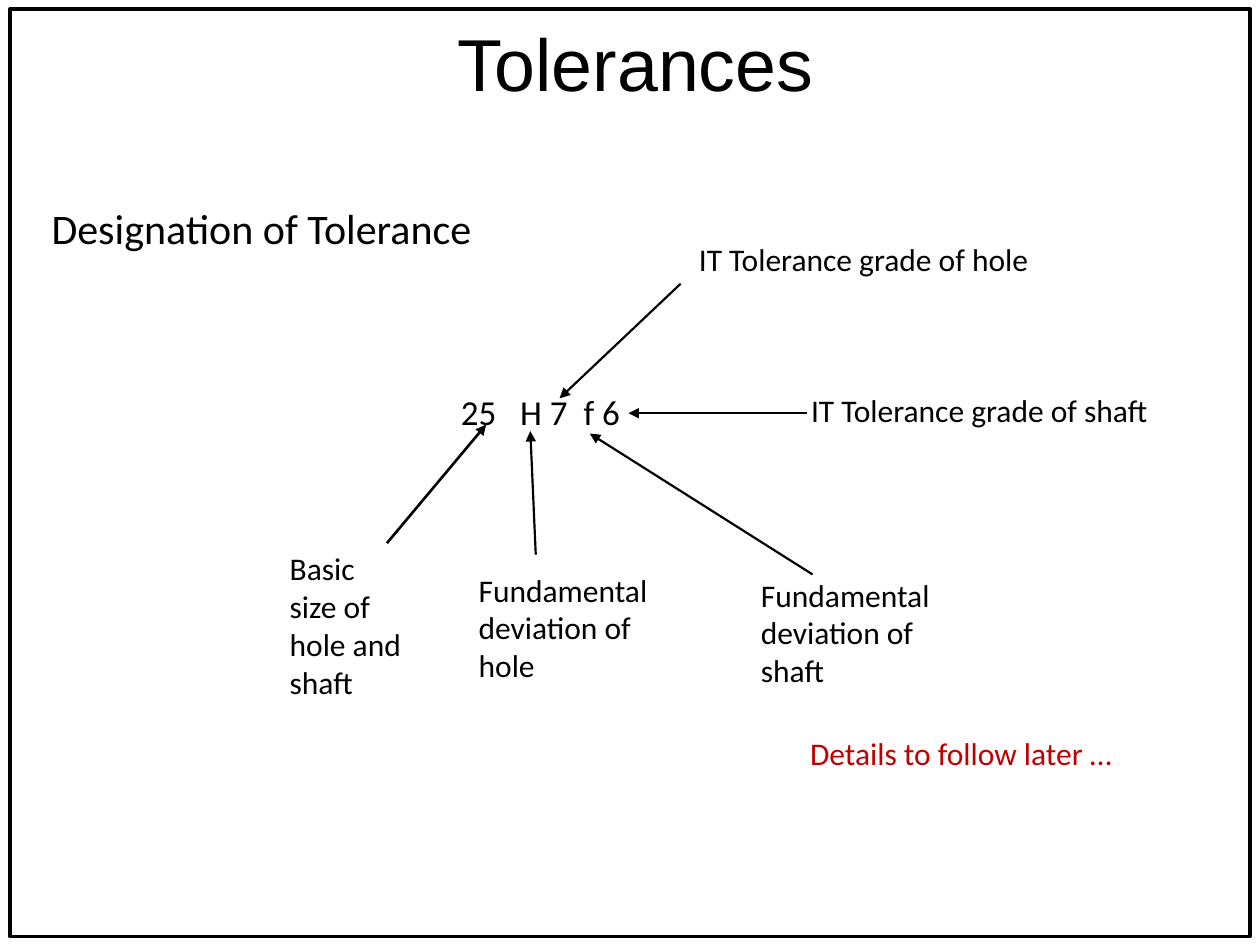
from lxml import etree
from pptx import Presentation
from pptx.dml.color import RGBColor
from pptx.enum import shapes, text
from pptx.oxml.ns import qn
from pptx.util import Cm, Pt

BLACK = RGBColor(0, 0, 0)
RED = RGBColor(0xC0, 0, 0)

# Lengths in centimetres
TITLE = ("Tolerances", (8.94, 0.23, 7.75, 2.06))
FRAME = (0.2, 0.18, 25, 18.7)
HEADING = ("Designation of Tolerance", (0.79, 3.96, 16.41, 1.27))

# Symbols of the designation, each with the extra gap in points after it
DESIGNATION = [("25", 9), ("H", 0), ("7", 4.5), ("f", 0), ("6", 0)]
DESIGNATION_BOX = (5.79, 7.75, 10.21, 1.12)

# Label, box, arrow start, arrow tip, arrow width
CALLOUTS = [
    ("Basic size of hole and shaft", (5.59, 10.95, 2.79, 3.33),
     (7.8, 10.95), (9.8, 8.56), 1.5),
    ("Fundamental deviation of hole", (9.4, 11.38, 4.19, 2.57),
     (10.8, 11.18), (10.69, 8.69), 1.25),
    ("IT Tolerance grade of hole", (13.84, 4.72, 8.61, 1.02),
     (13.72, 5.72), (11.28, 8.03), 1.25),
    ("Fundamental deviation of shaft", (15.09, 11.48, 4.19, 2.57),
     (16.38, 11.58), (11.89, 8.74), 1.25),
    ("IT Tolerance grade of shaft", (16.1, 7.75, 8.61, 1.02),
     (16.26, 8.33), (12.67, 8.33), 1.25),
]
NOTE = ("Details to follow later …", (16.08, 14.68, 6.81, 1.02))


def format_run(r, size, color=BLACK, font="Calibri"):
    r.font.size = Pt(size)
    r.font.name = font
    r.font.color.rgb = color


def add_label(s, label, box, size, color=BLACK, wrap=True):
    tf = s.shapes.add_textbox(*map(Cm, box)).text_frame
    tf.word_wrap = wrap
    p = tf.paragraphs[0]
    if label:
        p.text = label
        format_run(p.runs[0], size, color)
    return p


def add_designation(s):
    """Write the symbols in one line, widening the spaces between groups."""
    p = add_label(s, "", DESIGNATION_BOX, 20)
    p.alignment = text.PP_ALIGN.CENTER
    for i, (symbol, gap) in enumerate(DESIGNATION):
        pieces = [symbol] if i == len(DESIGNATION) - 1 else [symbol, " "]
        for piece in pieces:
            r = p.add_run()
            r.text = piece
            format_run(r, 20)
        if gap:
            r.font._element.set("spc", str(int(gap * 100)))


def add_arrow(s, start, tip, width):
    line = s.shapes.add_connector(
        shapes.MSO_CONNECTOR.STRAIGHT, *map(Cm, start + tip))
    line.line.color.rgb = BLACK
    line.line.width = Pt(width)
    etree.SubElement(line.line._get_or_add_ln(), qn("a:tailEnd"), type="triangle")
    etree.SubElement(line._element.spPr, qn("a:effectLst"))


def add_title(s):
    title = s.shapes.title
    label, box = TITLE
    title.left, title.top, title.width, title.height = map(Cm, box)
    tf = title.text_frame
    tf.text = label
    tf.word_wrap = False
    tf.vertical_anchor = text.MSO_ANCHOR.MIDDLE
    p = tf.paragraphs[0]
    p.alignment = text.PP_ALIGN.CENTER
    format_run(p.runs[0], 42, font="Arial")


def add_frame(s):
    frame = s.shapes.add_shape(shapes.MSO_SHAPE.RECTANGLE, *map(Cm, FRAME))
    frame.shadow.inherit = False
    frame.fill.background()
    frame.line.color.rgb = BLACK
    frame.line.width = Pt(2)


def main():
    prs = Presentation()
    prs.slide_width, prs.slide_height = Cm(25.4), Cm(19.05)
    s = prs.slides.add_slide(prs.slide_layouts[5])
    add_frame(s)
    add_title(s)
    add_label(s, *HEADING, 24)
    add_designation(s)
    for label, box, start, tip, width in CALLOUTS:
        add_arrow(s, start, tip, width)
        add_label(s, label, box, 18)
    add_label(s, *NOTE, 18, RED, wrap=False)
    prs.save("out.pptx")


if __name__ == "__main__":
    main()
